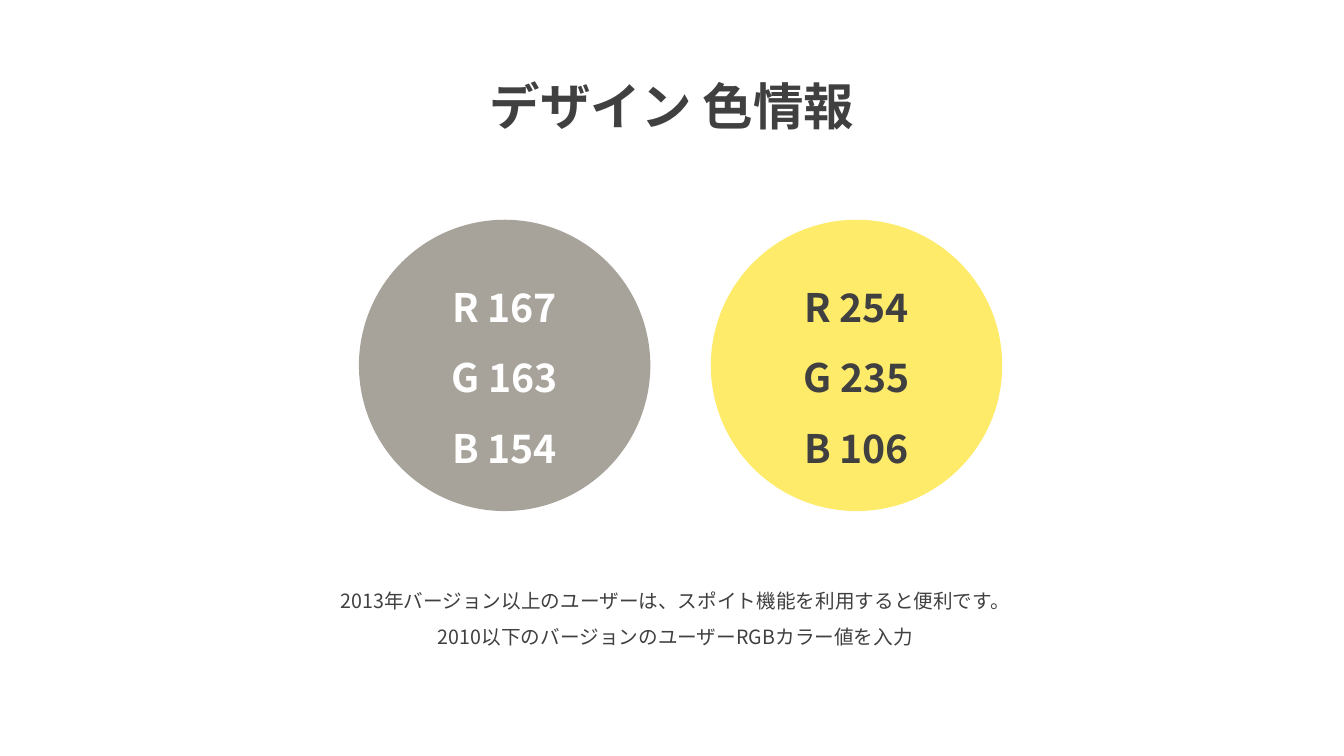
from lxml import etree
from pptx import Presentation
from pptx.dml.color import RGBColor
from pptx.enum.shapes import MSO_SHAPE
from pptx.enum.text import MSO_ANCHOR, PP_ALIGN
from pptx.oxml.ns import qn
from pptx.util import Inches, Pt

OVAL = MSO_SHAPE.OVAL
CENTER = PP_ALIGN.CENTER
MIDDLE = MSO_ANCHOR.MIDDLE
TOP = MSO_ANCHOR.TOP

WHITE = RGBColor(255, 255, 255)
DARK = RGBColor(64, 64, 64)
GRAY = RGBColor(167, 163, 154)
YELLOW = RGBColor(254, 235, 106)


class Page:
    font = "Noto Sans CJK KR"
    space = 1.5

    def __init__(self, slide):
        self.slide = slide

    def fill_text(self, frame, lines, size, color, bold, anchor):
        frame.word_wrap = True
        frame.vertical_anchor = anchor
        for i, line in enumerate(lines):
            para = frame.add_paragraph() if i else frame.paragraphs[0]
            para.alignment = CENTER
            para.line_spacing = self.space
            run = para.add_run()
            run.text = line
            font = run.font
            font.name = self.font
            font.size = Pt(size)
            font.bold = bold
            font.color.rgb = color
            east = etree.SubElement(font._element, qn("a:ea"))
            east.set("typeface", self.font)

    def text(self, left, top, width, height, lines, size, bold=False):
        box = self.slide.shapes.add_textbox(
            Inches(left), Inches(top), Inches(width), Inches(height))
        self.fill_text(box.text_frame, lines, size, DARK, bold, TOP)

    def swatch(self, left, top, size, fill, color):
        disc = self.slide.shapes.add_shape(
            OVAL, Inches(left), Inches(top), Inches(size), Inches(size))
        disc.shadow.inherit = False
        disc.fill.solid()
        disc.fill.fore_color.rgb = fill
        disc.line.fill.background()
        lines = [f"{name} {value}" for name, value in zip("RGB", fill)]
        self.fill_text(disc.text_frame, lines, 28, color, True, MIDDLE)


def main():
    deck = Presentation()
    deck.slide_width = Inches(13.33)
    deck.slide_height = Inches(7.5)
    page = Page(deck.slides.add_slide(deck.slide_layouts[6]))

    for i, (fill, color) in enumerate([(GRAY, WHITE), (YELLOW, DARK)]):
        page.swatch(3.56 + i * 3.49, 2.18, 2.89, fill, color)

    page.text(4.24, 0.4, 4.85, 0.91, ["デザイン 色情報"], 36, True)
    page.text(2.52, 5.68, 8.36, 0.77, [
        "2013年バージョン以上のユーザーは、スポイト機能を利用すると便利です。",
        "2010以下のバージョンのユーザーRGBカラー値を入力",
    ], 14)
    deck.save("out.pptx")


if __name__ == "__main__":
    main()
